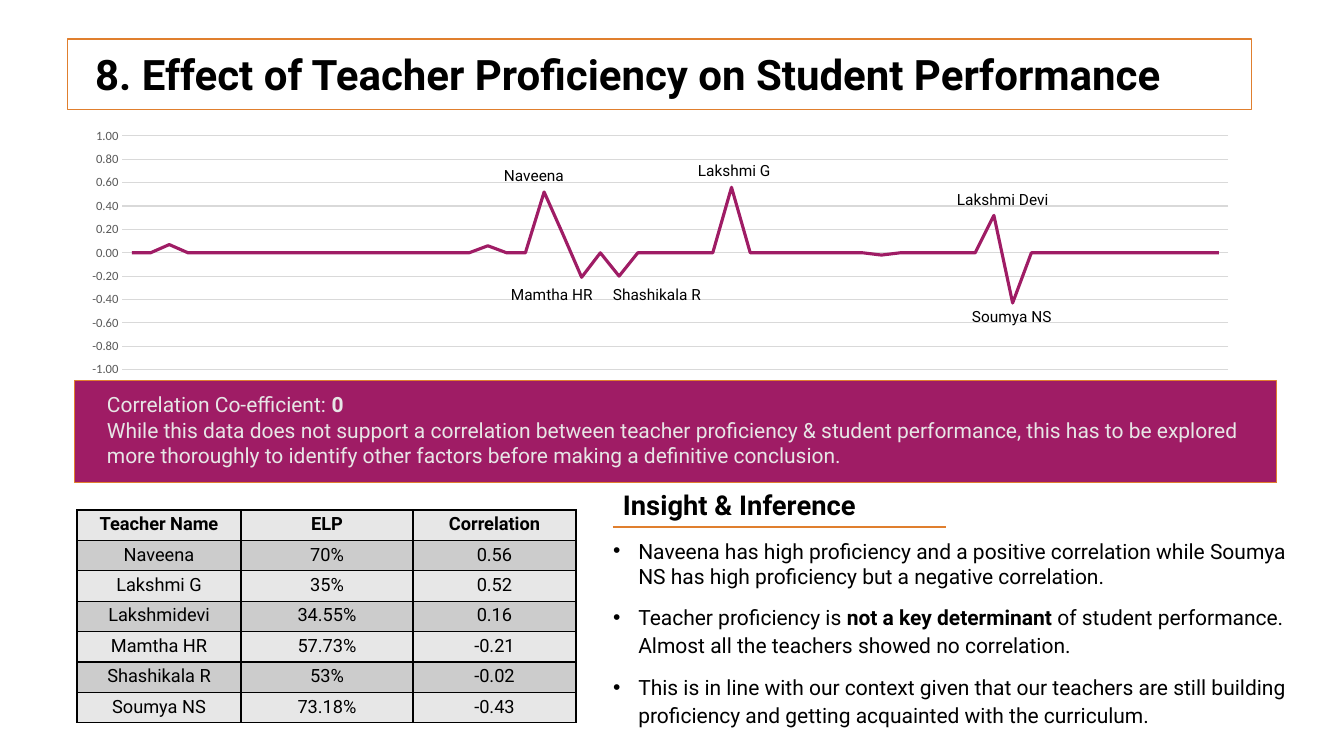
from lxml import etree
from pptx import Presentation
from pptx.chart.data import CategoryChartData
from pptx.dml.color import RGBColor
from pptx.enum.chart import XL_CHART_TYPE, XL_TICK_LABEL_POSITION, XL_TICK_MARK
from pptx.enum.shapes import MSO_CONNECTOR, MSO_SHAPE
from pptx.enum.text import MSO_ANCHOR, MSO_AUTO_SIZE, PP_ALIGN
from pptx.oxml import parse_xml
from pptx.oxml.ns import nsdecls, qn
from pptx.util import Pt

EMU_PER_PX = 914400 / 100.8
LEFT, CENTER = PP_ALIGN.LEFT, PP_ALIGN.CENTER
MIDDLE, TOP = MSO_ANCHOR.MIDDLE, MSO_ANCHOR.TOP
NO_TICK = XL_TICK_MARK.NONE
NO_LABELS = XL_TICK_LABEL_POSITION.NONE
COLORS = {name: RGBColor.from_string(value) for name, value in {
    "black": "000000", "orange": "E07F2E", "plum": "9F1C65", "pale": "E7E6E6",
    "axis": "595959", "grid": "D9D9D9", "light row": "E7E7E7", "dark row": "CCCCCC",
}.items()}


def px(*lengths):
    """Turn pixel lengths into a list of EMU values."""
    return [round(length * EMU_PER_PX) for length in lengths]


def add_span(para, text, size, color="black", bold=False):
    span = para.add_run()
    span.text = text
    span.font.name = "Roboto"
    span.font.size = Pt(size)
    span.font.bold = bold
    span.font.color.rgb = COLORS[color]


deck = Presentation()
deck.slide_width, deck.slide_height = px(1344, 756)
page = deck.slides.add_slide(deck.slide_layouts[1])
shapes = page.shapes
title, body = page.placeholders

# Title
title.left, title.top, title.width, title.height = px(85, 22, 1252, 110)
title.text_frame.auto_size = MSO_AUTO_SIZE.NONE
title.text_frame.vertical_anchor = MIDDLE
para = title.text_frame.paragraphs[0]
para.alignment = LEFT
para.line_spacing = 0.9
add_span(para, "8. Effect of Teacher Proficiency on Student Performance", 30, bold=True)

# Correlation chart: every teacher not listed here is at zero
TEACHER_COUNT = 59
correlations = {3: 0.07, 20: 0.06, 23: 0.52, 24: 0.16, 25: -0.21, 27: -0.2,
                33: 0.56, 41: -0.02, 47: 0.32, 48: -0.43}
teachers = range(1, TEACHER_COUNT + 1)
chart_data = CategoryChartData(number_format="0.00")
chart_data.categories = [str(teacher) for teacher in teachers]
chart_data.add_series("Series 1", [correlations.get(teacher, 0) for teacher in teachers])
chart = shapes.add_chart(XL_CHART_TYPE.LINE, *px(68, 124, 1184, 259), chart_data).chart
chart.has_legend = False
chart.has_title = False
chart.font.name = "Calibri"
chart.font.size = Pt(10)
chart.font.color.rgb = COLORS["black"]
plot = chart.plots[0]
plot.vary_by_categories = False
series = plot.series[0]
series.smooth = False
series.format.line.color.rgb = COLORS["plum"]
series.format.line.width = Pt(2.25)

category_axis = chart.category_axis
category_axis.tick_label_position = NO_LABELS
category_axis.major_tick_mark = NO_TICK
category_axis.format.line.fill.background()
category_axis.visible = False
value_axis = chart.value_axis
value_axis.minimum_scale, value_axis.maximum_scale, value_axis.major_unit = -1, 1, 0.2
value_axis.major_tick_mark = NO_TICK
value_axis.format.line.fill.background()
value_axis.major_gridlines.format.line.color.rgb = COLORS["grid"]
value_axis.major_gridlines.format.line.width = Pt(0.75)
labels = value_axis.tick_labels
labels.number_format, labels.number_format_is_linked = "0.00", False
labels.font.name = "Calibri"
labels.font.size = Pt(9)
labels.font.color.rgb = COLORS["axis"]

plot_area = chart.element.find(".//" + qn("c:plotArea"))
for old_layout in plot_area.findall(qn("c:layout")):
    plot_area.remove(old_layout)
plot_area.insert(0, parse_xml(
    f'<c:layout {nsdecls("c")}><c:manualLayout><c:layoutTarget val="inner"/>'
    '<c:xMode val="edge"/><c:yMode val="edge"/><c:x val="0.046"/><c:y val="0.046"/>'
    '<c:w val="0.934"/><c:h val="0.903"/></c:manualLayout></c:layout>'))

# Title frame and conclusion band
for bounds, fill in [((68, 39, 1184, 71), None), ((75, 381, 1202, 102), "plum")]:
    box = shapes.add_shape(MSO_SHAPE.RECTANGLE, *px(*bounds))
    box.shadow.inherit = False
    box.line.color.rgb = COLORS["orange"]
    box.line.width = Pt(0.75)
    if fill:
        box.fill.solid()
        box.fill.fore_color.rgb = COLORS[fill]
    else:
        box.fill.background()

# Teacher names on the chart, conclusion and section heading
text_boxes = [
    ((603, 280, 171, 29), [[("Shashikala R", 11)]]),
    ((501, 280, 171, 29), [[("Mamtha HR", 11)]]),
    ((962, 302, 171, 29), [[("Soumya NS", 11)]]),
    ((494, 161, 171, 29), [[("Naveena", 11)]]),
    ((688, 156, 171, 29), [[("Lakshmi G", 11)]]),
    ((947, 185, 171, 29), [[("Lakshmi Devi", 11)]]),
    ((97, 387, 1167, 87), [
        [("Correlation Co-efficient: ", 15, "pale"), ("0", 15, "pale", True)],
        [("While this data does not support a correlation between teacher proficiency "
          "& student performance, this has to be explored more thoroughly to identify "
          "other factors before making a definitive conclusion.", 15, "pale")]]),
    ((613, 470, 320, 74), [[("Insight & Inference", 19.5, "black", True)]]),
]
for bounds, paragraphs in text_boxes:
    box = shapes.add_textbox(*px(*bounds))
    frame = box.text_frame
    frame.word_wrap = True
    for number, spans in enumerate(paragraphs):
        para = frame.add_paragraph() if number else frame.paragraphs[0]
        for span in spans:
            add_span(para, *span)
frame.vertical_anchor = MIDDLE
frame.paragraphs[0].line_spacing = 0.9

underline = shapes.add_connector(MSO_CONNECTOR.STRAIGHT, *px(613, 527, 946, 527))
underline.line.color.rgb = COLORS["orange"]
underline.line.width = Pt(1)
etree.SubElement(underline._element.spPr, qn("a:effectLst"))

# Teacher table
rows = [
    ("Teacher Name", "ELP", "Correlation"),
    ("Naveena", "70%", "0.56"),
    ("Lakshmi G", "35%", "0.52"),
    ("Lakshmidevi", "34.55%", "0.16"),
    ("Mamtha HR", "57.73%", "-0.21"),
    ("Shashikala R", "53%", "-0.02"),
    ("Soumya NS", "73.18%", "-0.43"),
]
table = shapes.add_table(len(rows), 3, *px(77, 510, 499, 213)).table
for column, width in zip(table.columns, px(164, 172, 163)):
    column.width = width
for row_number, values in enumerate(rows):
    for column_number, value in enumerate(values):
        cell = table.cell(row_number, column_number)
        cell.margin_left, cell.margin_top, cell.margin_right, cell.margin_bottom = px(8, 4, 8, 4)
        para = cell.text_frame.paragraphs[0]
        para.alignment = CENTER
        add_span(para, value, 13, bold=row_number == 0)
        for side in ("lnL", "lnR", "lnT", "lnB"):
            cell._tc.get_or_add_tcPr().append(parse_xml(
                f'<a:{side} {nsdecls("a")} w="12700"><a:solidFill>'
                f'<a:srgbClr val="{COLORS["black"]}"/></a:solidFill></a:{side}>'))
        cell.fill.solid()
        cell.fill.fore_color.rgb = COLORS["dark row" if row_number % 2 else "light row"]

# Insights
insights = [
    (1.0, [("Naveena has high proficiency and a positive correlation while Soumya NS has "
            "high proficiency but a negative correlation.", False)]),
    (1.1, [("Teacher proficiency is ", False), ("not a key determinant", True),
           (" of student performance. Almost all the teachers showed no correlation.", False)]),
    (1.1, [("This is in line with our context given that our teachers are still building "
            "proficiency and getting acquainted with the curriculum.", False)]),
]
body.left, body.top, body.width, body.height = px(603, 533, 695, 186)
frame = body.text_frame
frame.auto_size = MSO_AUTO_SIZE.NONE
frame.vertical_anchor = TOP
for number, (line_spacing, spans) in enumerate(insights):
    para = frame.add_paragraph() if number else frame.paragraphs[0]
    para.line_spacing = line_spacing
    para.space_before = Pt(10)
    properties = para._p.get_or_add_pPr()
    properties.set("marL", "228600")
    properties.set("indent", "-228600")
    properties.append(parse_xml(f'<a:buFont {nsdecls("a")} typeface="Arial"/>'))
    properties.append(parse_xml(f'<a:buChar {nsdecls("a")} char="•"/>'))
    for text, bold in spans:
        add_span(para, text, 15, bold=bold)

deck.save("out.pptx")
